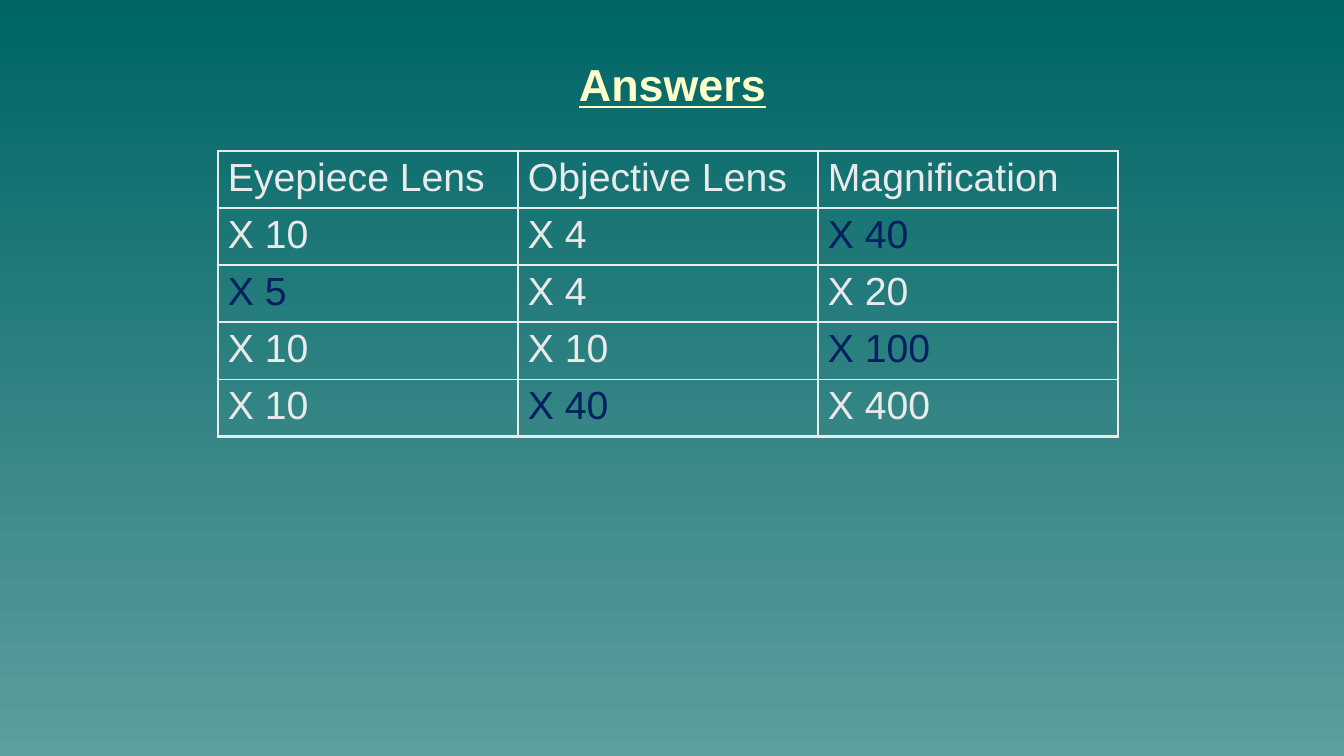
from lxml.etree import SubElement
from pptx import Presentation
from pptx.dml.color import RGBColor as RGB
from pptx.enum.text import MSO_ANCHOR as Anchor, PP_ALIGN as Align
from pptx.oxml.ns import qn
from pptx.util import Emu, Pt

COLORS = {
    "top": "006565",
    "bottom": "5D9E9E",
    "title": "FFFFCC",
    "given": "EAEAEA",
    "answer": "002060",
}
HEADINGS = ["Eyepiece Lens", "Objective Lens", "Magnification"]
LENSES = [
    ["X 10", "X 4", "X 40"],
    ["X 5", "X 4", "X 20"],
    ["X 10", "X 10", "X 100"],
    ["X 10", "X 40", "X 400"],
]
ANSWERS = {(1, 2), (2, 0), (3, 2), (4, 1)}
THICK, THIN = 2.25, 1


def px(length):
    return Emu(round(length * 914400 / 100.8))


def write(frame, text, color="given", size=28, bold=False, underline=False, align=Align.LEFT):
    paragraph = frame.paragraphs[0]
    paragraph.alignment = align
    run = paragraph.add_run()
    run.text = text
    font = run.font
    font.name = "Arial"
    font.size = Pt(size)
    font.bold = bold
    font.underline = underline
    font.color.rgb = RGB.from_string(COLORS[color])


def paint_background(slide):
    fill = slide.background.fill
    fill.gradient()
    fill.gradient_angle = 270
    for stop, position, color in zip(fill.gradient_stops, (0, 1), ("top", "bottom")):
        stop.position = position
        stop.color.rgb = RGB.from_string(COLORS[color])


def add_title(slide, text):
    title = slide.shapes.add_textbox(px(219), px(50), px(907), px(68))
    frame = title.text_frame
    frame.word_wrap = True
    frame.vertical_anchor = Anchor.MIDDLE
    frame.margin_left = frame.margin_right = px(10)
    frame.margin_top = frame.margin_bottom = px(6)
    write(frame, text, color="title", size=32, bold=True, underline=True, align=Align.CENTER)


def set_borders(cell, outer_sides):
    properties = cell._tc.get_or_add_tcPr()
    for side, outer in zip("LRTB", outer_sides):
        width = Pt(THICK if outer else THIN)
        line = SubElement(properties, qn(f"a:ln{side}"), w=str(int(width)))
        line_fill = SubElement(line, qn("a:solidFill"))
        SubElement(line_fill, qn("a:srgbClr"), val=COLORS["given"])


def add_lens_table(slide, rows):
    row_count, column_count = len(rows), len(rows[0])
    table = slide.shapes.add_table(
        row_count, column_count, px(218), px(151), px(300 * column_count), px(57 * row_count)
    ).table
    table.first_row = table.horz_banding = False
    for r, row in enumerate(rows):
        for c, text in enumerate(row):
            cell = table.cell(r, c)
            set_borders(cell, (c == 0, c == column_count - 1, r == 0, r == row_count - 1))
            cell.fill.background()
            cell.margin_left = cell.margin_right = px(10)
            cell.margin_top = cell.margin_bottom = px(5)
            write(cell.text_frame, text, color="answer" if (r, c) in ANSWERS else "given")


def main():
    deck = Presentation()
    deck.slide_width, deck.slide_height = px(1344), px(756)
    slide = deck.slides.add_slide(deck.slide_layouts[6])
    paint_background(slide)
    add_title(slide, "Answers")
    add_lens_table(slide, [HEADINGS, *LENSES])
    deck.save("out.pptx")


if __name__ == "__main__":
    main()
